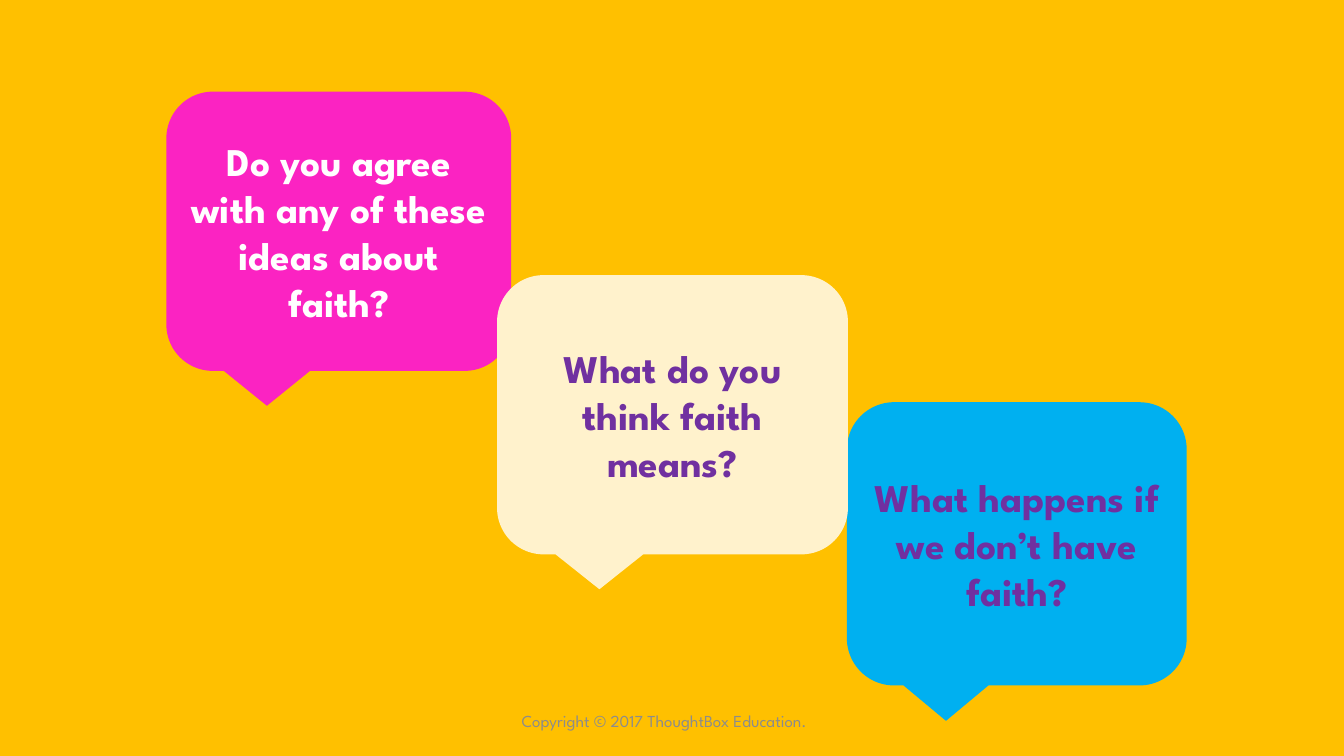
import pptx
import pptx.util
import pptx.dml.color
import pptx.enum.shapes
import pptx.enum.text
from dataclasses import dataclass


@dataclass(frozen=True)
class Theme:
    font: str = "League Spartan"
    background: str = "FFC000"
    pink: str = "FB23C2"
    blue: str = "00B0F0"
    cream: str = "FFF2CC"
    white: str = "FFFFFF"
    purple: str = "7030A0"
    grey: str = "8C8C8C"
    question_size: int = 28
    footer_size: int = 12


THEME = Theme()
SLIDE_WIDTH, SLIDE_HEIGHT = 13.33, 7.5

QUESTIONS = [
    ("Do you agree with any of these ideas about faith?",
     (1.65, 0.91, 3.42, 2.77), THEME.pink, THEME.white),
    ("What happens if we don’t have faith?",
     (8.4, 3.99, 3.37, 2.81), THEME.blue, THEME.purple),
    ("What do you think faith means?",
     (4.93, 2.73, 3.48, 2.77), THEME.cream, THEME.purple),
]
FOOTER = "Copyright © 2017 ThoughtBox Education."
FOOTER_BOX = (4.34, 6.95, 4.5, 0.4)


def color(value):
    return pptx.dml.color.RGBColor.from_string(value)


def inches(box):
    return [pptx.util.Inches(length) for length in box]


def write(shape, text, size, text_color, bold=False):
    frame = shape.text_frame
    frame.word_wrap = True
    frame.vertical_anchor = pptx.enum.text.MSO_ANCHOR.MIDDLE
    paragraph = frame.paragraphs[0]
    paragraph.text = text
    paragraph.alignment = pptx.enum.text.PP_ALIGN.CENTER
    paragraph.font.name = THEME.font
    paragraph.font.size = pptx.util.Pt(size)
    paragraph.font.bold = bold
    paragraph.font.color.rgb = color(text_color)


def add_bubble(slide, text, box, fill, text_color):
    bubble = slide.shapes.add_shape(
        pptx.enum.shapes.MSO_SHAPE.ROUNDED_RECTANGULAR_CALLOUT, *inches(box))
    bubble.shadow.inherit = False
    bubble.fill.solid()
    bubble.fill.fore_color.rgb = color(fill)
    bubble.line.fill.background()
    write(bubble, text, THEME.question_size, text_color, bold=True)


def main():
    presentation = pptx.Presentation()
    presentation.slide_width, presentation.slide_height = inches((SLIDE_WIDTH, SLIDE_HEIGHT))
    slide = presentation.slides.add_slide(presentation.slide_layouts[6])
    slide.background.fill.solid()
    slide.background.fill.fore_color.rgb = color(THEME.background)

    footer = slide.shapes.add_textbox(*inches(FOOTER_BOX))
    write(footer, FOOTER, THEME.footer_size, THEME.grey)
    for question in QUESTIONS:
        add_bubble(slide, *question)

    presentation.save("out.pptx")


if __name__ == "__main__":
    main()
